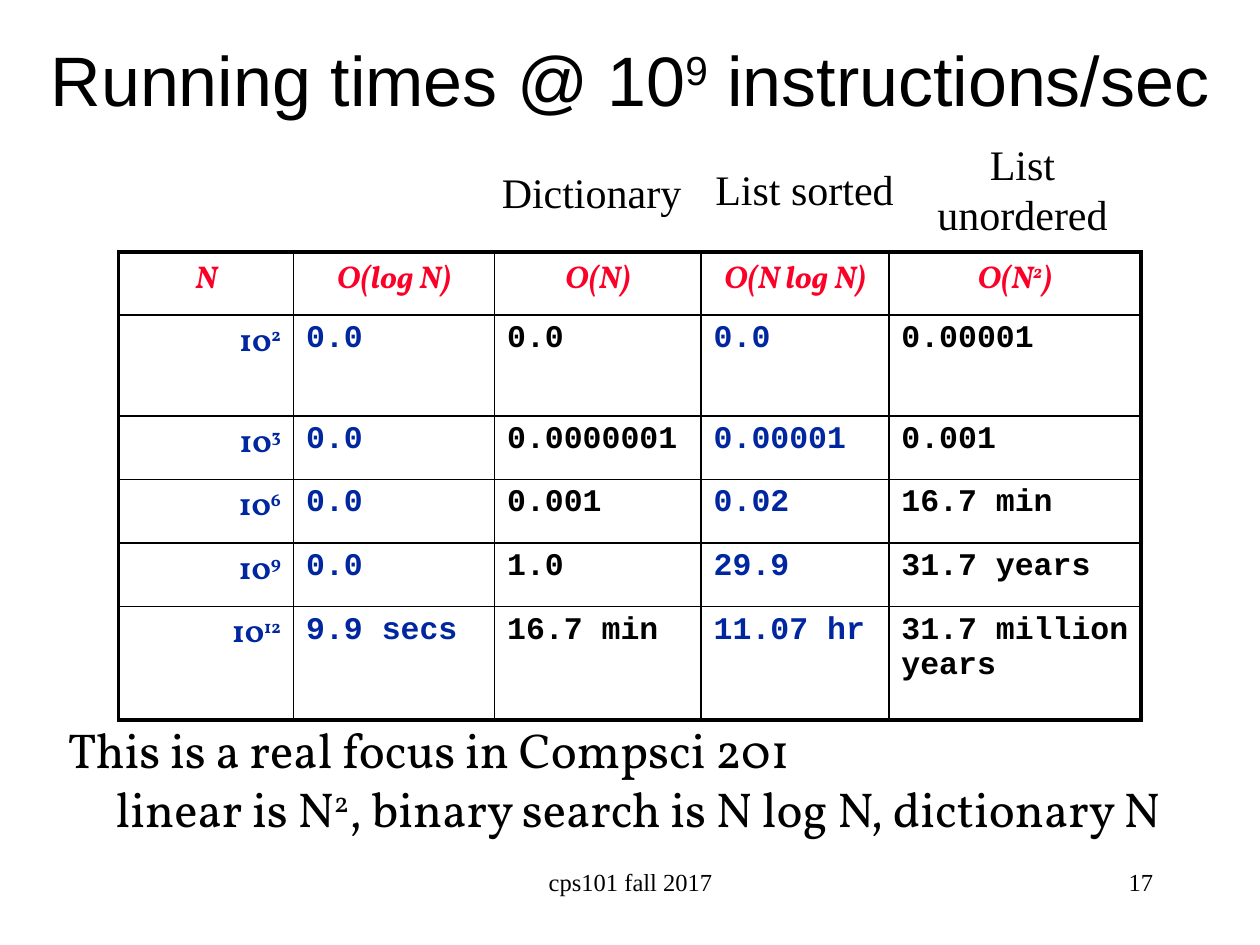
from dataclasses import dataclass

from lxml.etree import SubElement
from pptx import Presentation
from pptx.dml.color import RGBColor
from pptx.enum.text import MSO_ANCHOR as Anchor, PP_ALIGN as Align
from pptx.oxml.ns import qn
from pptx.util import Emu, Inches, Pt

BLACK = RGBColor(0x00, 0x00, 0x00)
RED = RGBColor(0xFC, 0x01, 0x28)
BLUE = RGBColor(0x00, 0x27, 0x9F)
SERIF, DISPLAY, SANS, MONO = "Times New Roman", "Vollkorn", "Arial", "Courier New"

UNIT = Inches(0.1)  # the slide is a grid of 100 columns and 75 rows
OUTER_LINE, INNER_LINE = Pt(2.25), Pt(1)


@dataclass
class Box:
    left: float
    top: float
    width: float
    height: float

    def inner(self, left, top, width, height):
        """Box placed relative to the corner of this one."""
        return Box(self.left + left, self.top + top, width, height)

    def lengths(self):
        return [grid(value) for value in (self.left, self.top, self.width, self.height)]


def grid(count):
    return Emu(round(count * UNIT))


def write(paragraph, text, font=SERIF, size=24, color=BLACK, bold=False,
          italic=False, align=Align.LEFT, indent=0):
    """Fill a paragraph; the text between two carets is raised."""
    paragraph.alignment = align
    if indent:
        paragraph._p.get_or_add_pPr().set("marL", str(grid(indent)))
    for index, part in enumerate(text.split("^")):
        if not part:
            continue
        run = paragraph.add_run()
        run.text = part
        run.font.name, run.font.size = font, Pt(size)
        run.font.bold, run.font.italic = bold, italic
        run.font.color.rgb = color
        if index % 2:
            run._r.get_or_add_rPr().set("baseline", "30000")


def add_text_frame(slide, box, anchor=Anchor.TOP):
    frame = slide.shapes.add_textbox(*box.lengths()).text_frame
    frame.word_wrap = True
    frame.vertical_anchor = anchor
    return frame


def add_text(slide, box, text, anchor=Anchor.TOP, **style):
    write(add_text_frame(slide, box, anchor).paragraphs[0], text, **style)


def add_column_labels(slide, box):
    labels = [("Dictionary", 0, 2.2, 5), ("List sorted", 16.9, 2, 5),
              ("List unordered", 34.2, 0, 9.1)]
    for text, left, top, height in labels:
        add_text(slide, box.inner(left, top, 18.9, height), text, align=Align.CENTER)


def set_borders(cell, **widths):
    properties = cell._tc.get_or_add_tcPr()
    for index, (side, width) in enumerate(widths.items()):
        line = SubElement(properties, qn(f"a:ln{side}"), w=str(width))
        fill = SubElement(line, qn("a:solidFill"))
        SubElement(fill, qn("a:srgbClr"), val=str(BLACK))
        properties.insert(index, line)


def cell_style(row, column):
    if row == 0:
        return dict(font=DISPLAY, color=RED, italic=True, align=Align.CENTER)
    if column == 0:
        return dict(font=DISPLAY, color=BLUE, align=Align.RIGHT)
    return dict(font=MONO, color=BLUE if column % 2 else BLACK)


def add_running_times(slide, box):
    values = [
        ["N", "O(log N)", "O(N)", "O(N log N)", "O(N^2^)"],
        ["10^2^", "0.0", "0.0", "0.0", "0.00001"],
        ["10^3^", "0.0", "0.0000001", "0.00001", "0.001"],
        ["10^6^", "0.0", "0.001", "0.02", "16.7 min"],
        ["10^9^", "0.0", "1.0", "29.9", "31.7 years"],
        ["10^12^", "9.9 secs", "16.7 min", "11.07 hr", "31.7 million years"],
    ]
    widths = [13.9, 15.95, 16.4, 14.9, 20]
    heights = [5, 8, 5.05, 5.05, 5.05, 9]
    last_row, last_column = len(heights) - 1, len(widths) - 1
    table = slide.shapes.add_table(len(heights), len(widths), *box.lengths()).table
    table.first_row = table.horz_banding = False
    for column, width in zip(table.columns, widths):
        column.width = grid(width)
    for row, height in zip(table.rows, heights):
        row.height = grid(height)
    for row, texts in enumerate(values):
        for column, text in enumerate(texts):
            cell = table.cell(row, column)
            cell.fill.background()
            if row and column:
                cell.margin_right = grid(0.5)
            write(cell.text_frame.paragraphs[0], text, size=18, bold=True,
                  **cell_style(row, column))
            set_borders(cell,
                        L=INNER_LINE if column else OUTER_LINE,
                        R=OUTER_LINE if column == last_column else INNER_LINE,
                        T=INNER_LINE if row else OUTER_LINE,
                        B=OUTER_LINE if row == last_row else INNER_LINE)


def add_remarks(slide, box):
    frame = add_text_frame(slide, box)
    frame.margin_top = frame.margin_bottom = 0
    style = dict(font=DISPLAY, size=28)
    write(frame.paragraphs[0], "This is a real focus in Compsci 201", **style)
    write(frame.add_paragraph(),
          "linear is N^2^, binary search is N log N, dictionary N", indent=3.8, **style)


def add_footer(slide, box):
    add_text(slide, box.inner(0, 0, 31.7, box.height), "cps101 fall 2017",
             size=14, align=Align.CENTER)
    add_text(slide, box.inner(37.5, 0, 20.8, box.height), "17",
             size=14, align=Align.RIGHT)


def main():
    presentation = Presentation()
    presentation.slide_width, presentation.slide_height = grid(100), grid(75)
    slide = presentation.slides.add_slide(presentation.slide_layouts[6])
    add_text(slide, Box(0, 0.7, 100, 11), "Running times @ 10^9^ instructions/sec",
             anchor=Anchor.MIDDLE, font=SANS, size=40, align=Align.CENTER)
    add_column_labels(slide, Box(37.5, 10.5, 53.1, 9.1))
    add_running_times(slide, Box(9.4, 20, 81.15, 37.15))
    add_remarks(slide, Box(4.4, 57.1, 94.2, 11))
    add_footer(slide, Box(34.2, 68.3, 58.3, 5))
    presentation.save("out.pptx")


if __name__ == "__main__":
    main()
